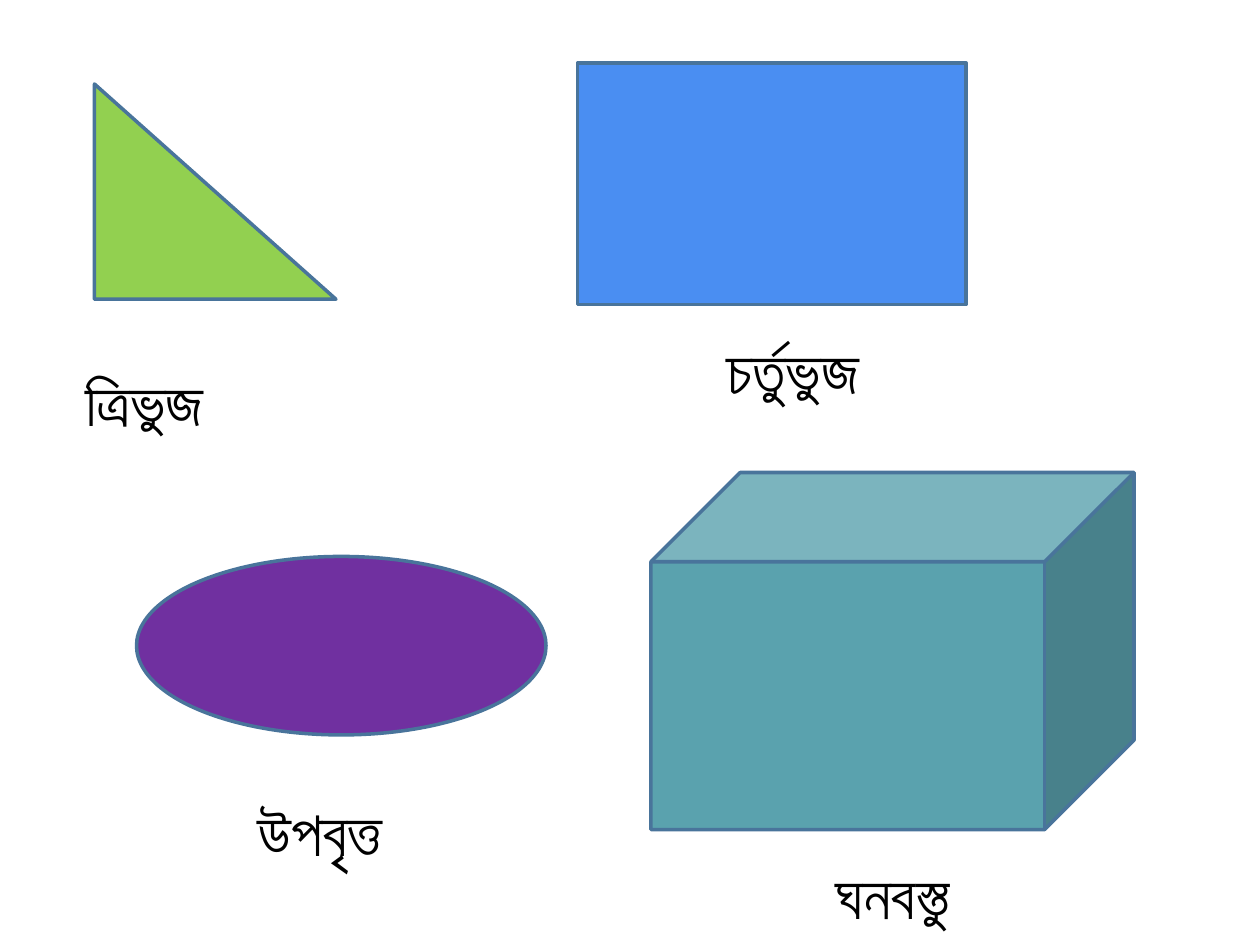
from pptx import Presentation
from pptx import util as u
from pptx.dml.color import RGBColor
from pptx.enum import shapes, text

PX = 7620
LABEL_HEIGHT = 85
LEFT, CENTER = text.PP_ALIGN.LEFT, text.PP_ALIGN.CENTER
KIND = shapes.MSO_SHAPE

FIGURES = [
    (KIND.RIGHT_TRIANGLE, "92D050", (90, 80, 230, 205), "ত্রিভুজ", (-20, 260, 250), LEFT),
    (KIND.CUBE, "5AA2AE", (620, 450, 460, 340), "ঘনবস্তু", (60, 360, 340), CENTER),
    (KIND.RECTANGLE, "4A8EF2", (550, 60, 370, 230), "চর্তুভুজ", (0, 250, 410), CENTER),
    (KIND.OVAL, "7030A0", (130, 530, 390, 170), "উপবৃত্ত", (0, 220, 350), CENTER),
]


def px(*lengths):
    """Turn px lengths into EMU."""
    return [u.Emu(length * PX) for length in lengths]


def color(hex_value):
    """Turn a hex string into a colour."""
    return RGBColor.from_string(hex_value)


def add_label(slide, box, name, align):
    """Write the name of a figure in the given box."""
    label = slide.shapes.add_textbox(*px(*box))
    frame = label.text_frame
    frame.word_wrap = True
    frame.auto_size = text.MSO_AUTO_SIZE.SHAPE_TO_FIT_TEXT
    paragraph = frame.paragraphs[0]
    paragraph.text = name
    paragraph.alignment = align
    paragraph.font.name = "Calibri"
    paragraph.font.size = u.Pt(36)
    paragraph.font.color.rgb = color("000000")


def add_figure(slide, box, kind, fill, name, label_offset, align):
    """Draw a geometric figure in its box with its name beneath it."""
    figure = slide.shapes.add_shape(kind, *px(*box))
    figure.shadow.inherit = False
    figure.fill.solid()
    figure.fill.fore_color.rgb = color(fill)
    figure.line.color.rgb = color("49749B")
    figure.line.width = u.Pt(2)
    left, top = box[:2]
    dx, dy, width = label_offset
    add_label(slide, (left + dx, top + dy, width, LABEL_HEIGHT), name, align)


def main():
    """Build the slide of named figures."""
    deck = Presentation()
    deck.slide_width, deck.slide_height = px(1200, 900)
    slide = deck.slides.add_slide(deck.slide_layouts[6])
    for kind, fill, box, name, label_offset, align in FIGURES:
        add_figure(slide, box, kind, fill, name, label_offset, align)
    deck.save("out.pptx")


if __name__ == "__main__":
    main()
